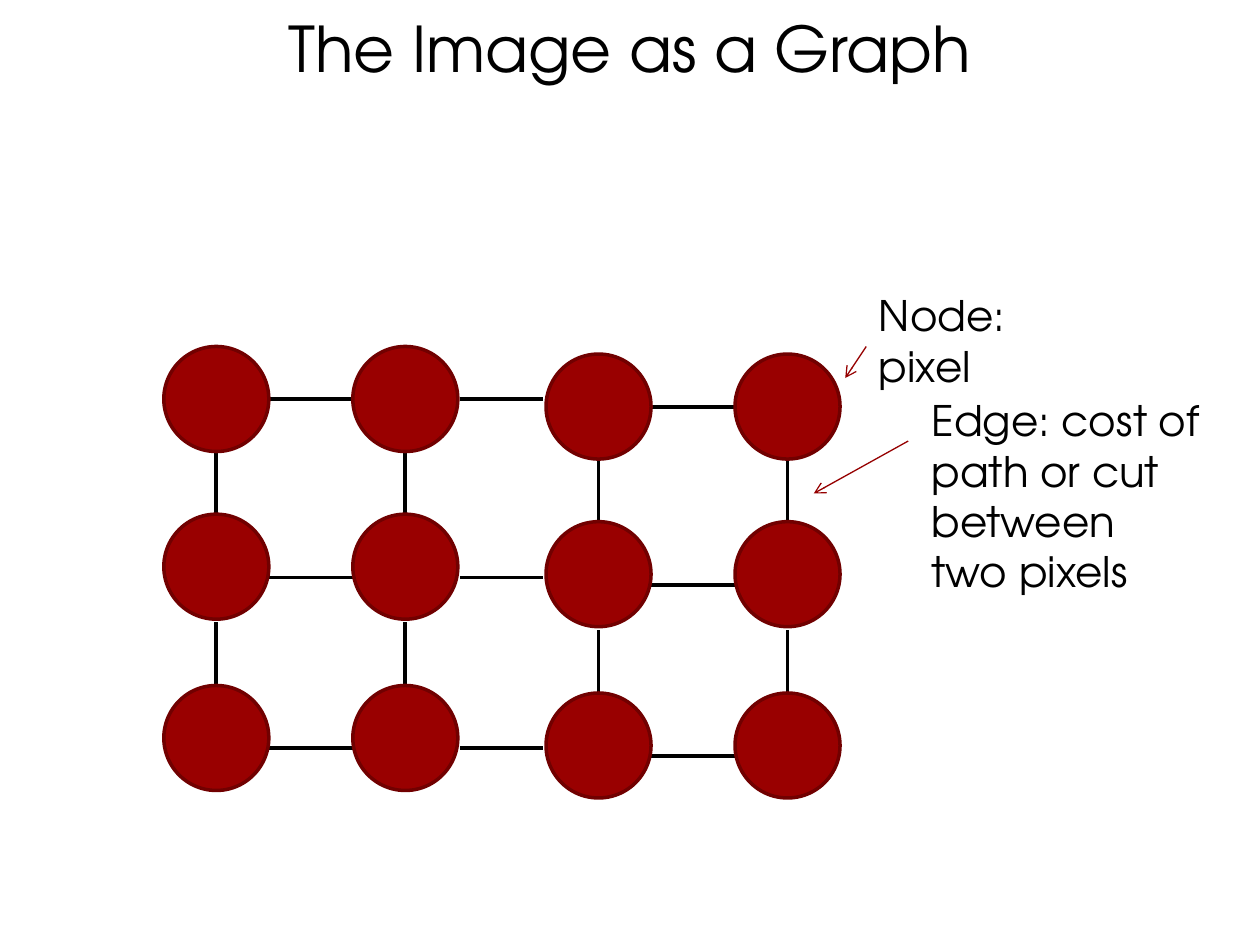
from lxml import etree
from pptx import Presentation
from pptx.dml.color import RGBColor
from pptx.enum.shapes import MSO_CONNECTOR, MSO_SHAPE
from pptx.enum.text import MSO_ANCHOR, PP_ALIGN
from pptx.oxml.ns import qn
from pptx.util import Pt

LINE = MSO_CONNECTOR.STRAIGHT
OVAL = MSO_SHAPE.OVAL
TOP, MIDDLE = MSO_ANCHOR.TOP, MSO_ANCHOR.MIDDLE
LEFT, CENTER = PP_ALIGN.LEFT, PP_ALIGN.CENTER


def color(code):
    return RGBColor.from_string(code)


class Page:
    font = "TeX Gyre Adventor"
    ink = "000000"
    fill = "990000"
    rim = "710000"
    accent = "960000"

    def __init__(self, slide):
        self.slide = slide

    def text(self, words, x, y, w, h, size, align=LEFT, anchor=TOP):
        frame = self.slide.shapes.add_textbox(Pt(x), Pt(y), Pt(w), Pt(h)).text_frame
        frame.word_wrap = True
        frame.vertical_anchor = anchor
        para = frame.paragraphs[0]
        para.alignment = align
        run = para.add_run()
        run.text = words
        run.font.name = self.font
        run.font.size = Pt(size)
        run.font.color.rgb = color(self.ink)

    def node(self, x, y, size):
        dot = self.slide.shapes.add_shape(OVAL, Pt(x), Pt(y), Pt(size), Pt(size))
        dot.shadow.inherit = False
        dot.fill.solid()
        dot.fill.fore_color.rgb = color(self.fill)
        dot.line.color.rgb = color(self.rim)
        dot.line.width = Pt(2)

    def line(self, x1, y1, x2, y2, shade=ink, width=2.25):
        link = self.slide.shapes.add_connector(LINE, Pt(x1), Pt(y1), Pt(x2), Pt(y2))
        link.line.color.rgb = color(shade)
        link.line.width = Pt(width)
        etree.SubElement(link._element.spPr, qn("a:effectLst"))
        return link

    def arrow(self, x1, y1, x2, y2):
        link = self.line(x1, y1, x2, y2, self.accent, 0.75)
        etree.SubElement(link.line._get_or_add_ln(), qn("a:tailEnd"), type="arrow")


def main():
    deck = Presentation()
    deck.slide_width, deck.slide_height = Pt(720), Pt(540)
    page = Page(deck.slides.add_slide(deck.slide_layouts[6]))

    page.text("The Image as a Graph", 0, 0, 720, 54, 36, CENTER, MIDDLE)

    # Grid: the right two columns sit a little lower
    size = 60
    cols = [(93.6, 0), (201.6, 0), (312, 4.3), (420, 4.3)]
    rows = [198, 293.8, 391.7]
    drops = [30.2, 36.2, 36]  # edge height below the top of each row
    spans = [(153.4, 201.6), (262.8, 310.3), (372, 420)]
    edge = 36

    # Edges between columns
    for top, drop in zip(rows, drops):
        for (x1, x2), shift in zip(spans, (0, 0, 4.3)):
            y = top + drop + shift
            page.line(x1, y, x2, y)

    # Edges between rows, each ending on the lower node
    for x, shift in cols:
        for top in rows[1:]:
            y = top + shift
            page.line(x + size / 2, y - edge, x + size / 2, y)

    # Nodes
    for top in rows:
        for x, shift in cols:
            page.node(x, top + shift, size)

    # Labels and their arrows
    page.text("Node: pixel", 495, 162, 136, 36, 24)
    page.arrow(495, 198, 483, 216)
    page.text("Edge: cost of path or cut between two pixels", 525.3, 222, 168, 124, 24)
    page.arrow(519, 252, 465, 282)

    deck.save("out.pptx")


if __name__ == "__main__":
    main()
